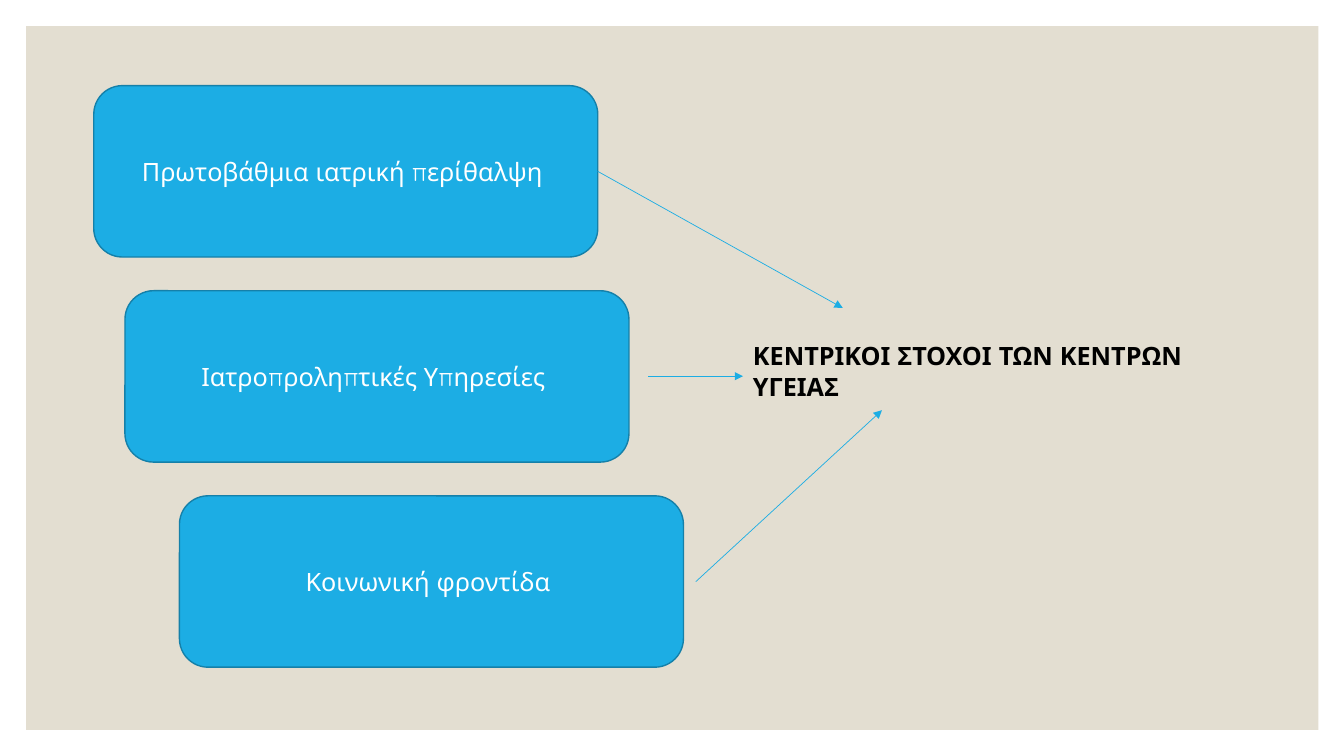
from lxml import etree
from pptx import Presentation
from pptx.dml.color import RGBColor
from pptx.enum.shapes import MSO_CONNECTOR, MSO_SHAPE
from pptx.enum.text import MSO_ANCHOR, MSO_AUTO_SIZE, PP_ALIGN
from pptx.oxml.ns import qn
from pptx.util import Pt

RECTANGLE, ROUNDED = MSO_SHAPE.RECTANGLE, MSO_SHAPE.ROUNDED_RECTANGLE
STRAIGHT = MSO_CONNECTOR.STRAIGHT
MIDDLE, CENTER = MSO_ANCHOR.MIDDLE, PP_ALIGN.CENTER
GROW = MSO_AUTO_SIZE.SHAPE_TO_FIT_TEXT

SAND = RGBColor(0xE3, 0xDE, 0xD1)
BLUE = RGBColor(0x1C, 0xAD, 0xE4)
DARK_BLUE = RGBColor(0x15, 0x80, 0xA9)
WHITE = RGBColor(0xFF, 0xFF, 0xFF)
BLACK = RGBColor(0, 0, 0)

SERVICE_WIDTH, SERVICE_HEIGHT = 360, 122.4
SERVICE_TOP, SERVICE_PITCH = 61.2, 146.5
SERVICES = [
    (67, "Πρωτοβάθμια ιατρική περίθαλψη "),
    (89.3, "Ιατροπροληπτικές Υπηρεσίες "),
    (128.2, "Κοινωνική φροντίδα "),
]
ARROWS = [
    (427, 122.4, 602, 220),
    (463, 268.7, 530.8, 268.7),
    (497, 415.5, 630, 293),
]


def add_panel(kind, left, top, width, height, fill):
    panel = page.shapes.add_shape(kind, Pt(left), Pt(top), Pt(width), Pt(height))
    panel.shadow.inherit = False
    panel.fill.solid()
    panel.fill.fore_color.rgb = fill
    return panel


def write_text(para, text, color, bold):
    span = para.add_run()
    span.text = text
    span.font.color.rgb = color
    font_format = {"name": "Quicksand", "size": Pt(18), "bold": bold}
    for name, value in font_format.items():
        setattr(span.font, name, value)


deck = Presentation()
deck.slide_width, deck.slide_height = Pt(960), Pt(540)
page = deck.slides.add_slide(deck.slide_layouts[6])

backdrop = add_panel(RECTANGLE, 18.7, 18.7, 923, 502.6, SAND)
backdrop.line.fill.background()

for row, (left, text) in enumerate(SERVICES):
    top = SERVICE_TOP + row * SERVICE_PITCH
    service = add_panel(ROUNDED, left, top, SERVICE_WIDTH, SERVICE_HEIGHT, BLUE)
    service.line.color.rgb = DARK_BLUE
    service.line.width = Pt(1)
    service.text_frame.vertical_anchor = MIDDLE
    para = service.text_frame.paragraphs[0]
    para.alignment = CENTER
    write_text(para, text, WHITE, False)

goal = page.shapes.add_textbox(Pt(530.8), Pt(239.8), Pt(364.3), Pt(29))
goal.text_frame.word_wrap = True
goal.text_frame.auto_size = GROW
write_text(goal.text_frame.paragraphs[0], "ΚΕΝΤΡΙΚΟΙ ΣΤΟΧΟΙ ΤΩΝ ΚΕΝΤΡΩΝ ΥΓΕΙΑΣ", BLACK, True)

for ends in ARROWS:
    arrow = page.shapes.add_connector(STRAIGHT, *map(Pt, ends))
    arrow.line.color.rgb = BLUE
    arrow.line.width = Pt(0.5)
    etree.SubElement(arrow.line._get_or_add_ln(), qn("a:tailEnd"), type="triangle")
    etree.SubElement(arrow._element.spPr, qn("a:effectLst"))

deck.save("out.pptx")
